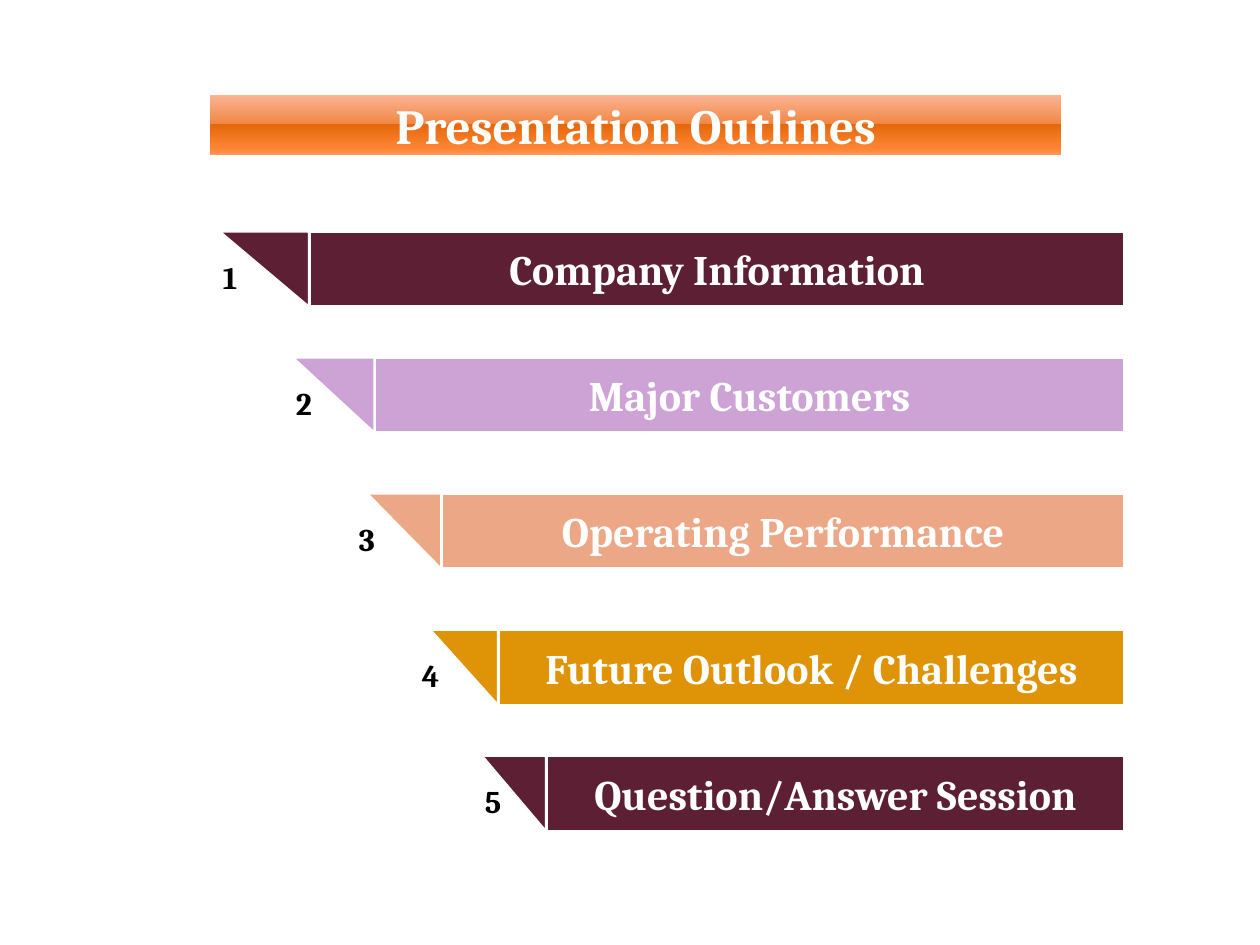
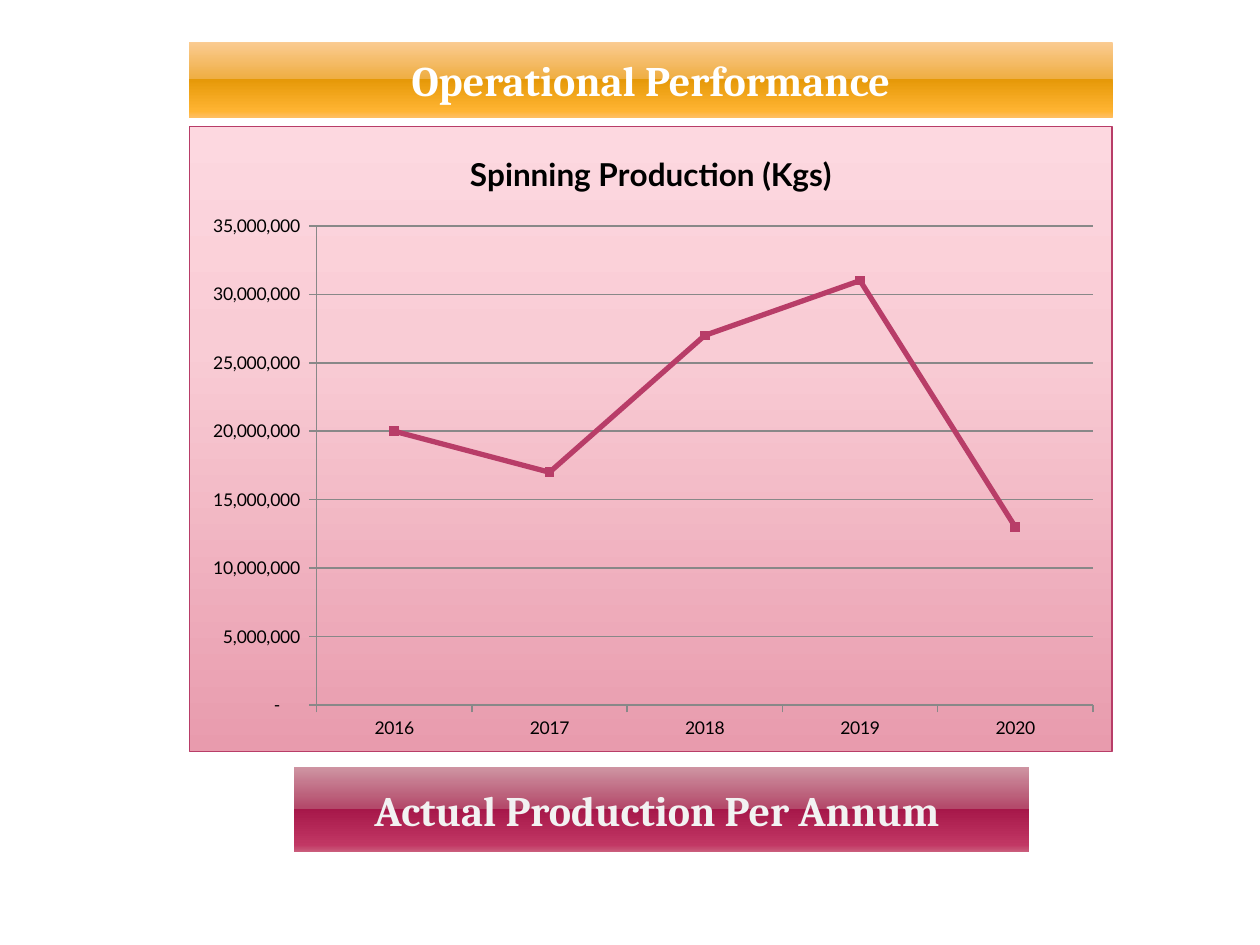
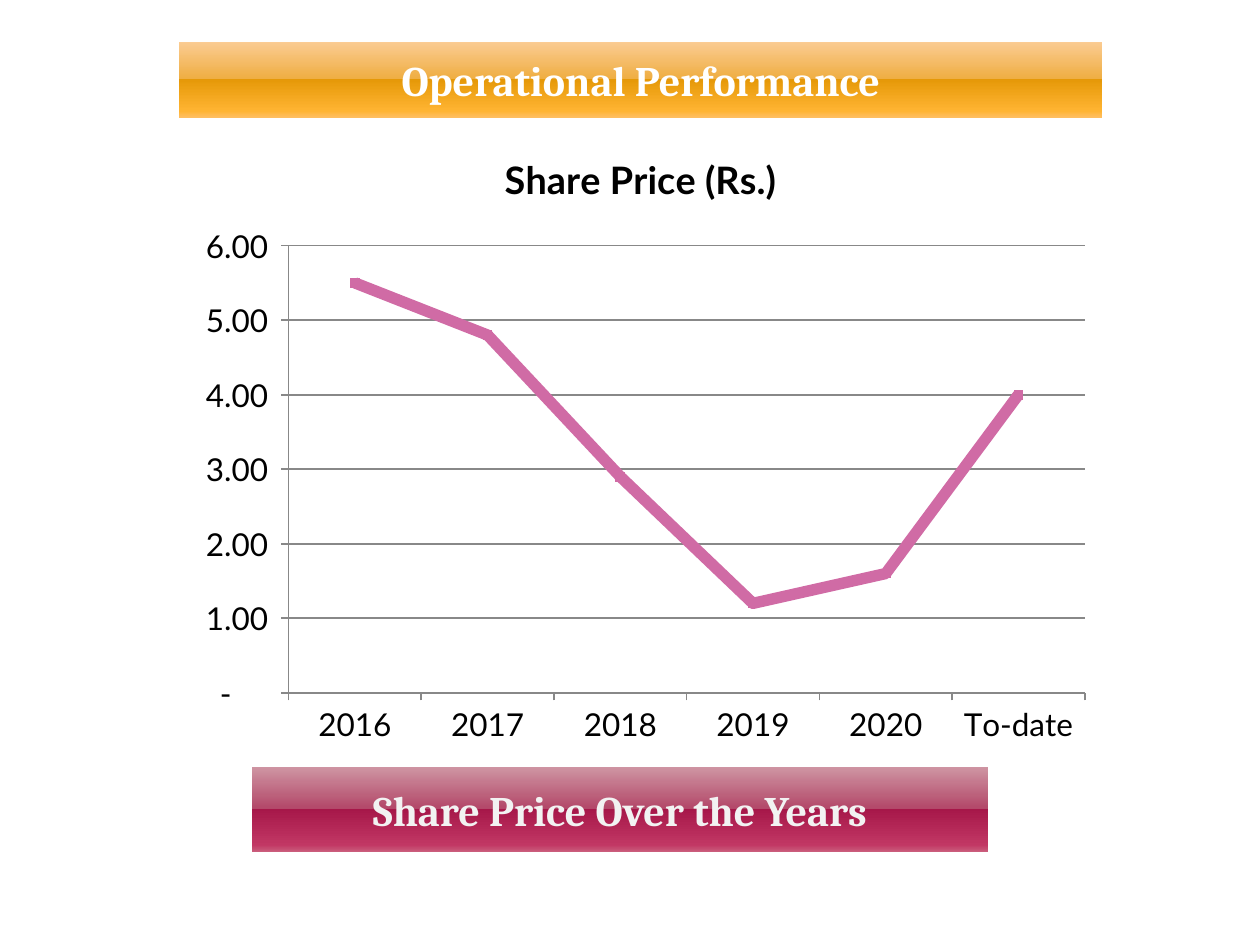
from dataclasses import dataclass

from pptx import Presentation
from pptx import util as u
from pptx.chart.data import CategoryChartData
from pptx.dml.color import RGBColor
from pptx.enum import chart as charts, shapes, text
from pptx.oxml import parse_xml
from pptx.oxml.ns import nsdecls, qn
from pptx.util import Inches, Pt

HEADING_FONT = "Cambria"
CHART_FONT = "Lato"
WHITE = RGBColor(0xFF, 0xFF, 0xFF)
OFF_WHITE = RGBColor(0xF2, 0xF2, 0xF2)
BLACK = RGBColor(0x00, 0x00, 0x00)
AXIS_GRAY = RGBColor(0x88, 0x88, 0x88)
PLUM = RGBColor(0x5C, 0x1F, 0x34)
LILAC = RGBColor(0xCD, 0xA3, 0xD6)
PEACH = RGBColor(0xEB, 0xA7, 0x86)
AMBER = RGBColor(0xDF, 0x93, 0x07)
RASPBERRY = RGBColor(0xB8, 0x3D, 0x68)
PINK = RGBColor(0xD0, 0x6B, 0xA5)

GLOSS_STOPS = (0, 49, 49, 92, 100)
Stops = tuple[tuple[int, RGBColor], ...]


def stops(positions: tuple[int, ...], colors: str) -> Stops:
    return tuple(zip(positions, map(RGBColor.from_string, colors.split())))


ORANGE_GLOSS = stops(GLOSS_STOPS, "FBB494 F08745 E5670B FF8736 FF9961")
GOLD_GLOSS = stops(GLOSS_STOPS, "FBCC93 EFAE43 E59807 FFB432 FFBE5F")
WINE_GLOSS = stops(GLOSS_STOPS, "CE94A2 B34869 A61749 C13764 CA5D7C")
ROSE_FADE = stops((0, 65, 100), "E89BAD F9CCD5 FDD8E0")


@dataclass(frozen=True)
class Frame:
    left: float
    top: float
    width: float
    height: float

    def lengths(self) -> tuple[u.Length, ...]:
        return tuple(map(Inches, (self.left, self.top, self.width, self.height)))


@dataclass(frozen=True)
class OutlineRow:
    label: str
    color: RGBColor
    tip: float
    bar_left: float
    top: float
    number_left: float


@dataclass(frozen=True)
class ChartPage:
    title_left: float
    caption: str
    caption_left: float
    chart_height: float
    series_name: str
    values: dict[str, float]
    number_format: str
    axis_max: float
    axis_step: float
    font_size: float
    title_size: float
    line_color: RGBColor
    line_width: float
    plot: Frame
    framed: bool


OUTLINE = (
    OutlineRow("Company Information", PLUM, 1.75, 2.46, 1.84, 1.67),
    OutlineRow("Major Customers", LILAC, 2.33, 2.98, 2.84, 2.25),
    OutlineRow("Operating Performance", PEACH, 2.92, 3.51, 3.92, 2.75),
    OutlineRow("Future Outlook / Challenges", AMBER, 3.42, 3.96, 5, 3.25),
    OutlineRow("Question/Answer Session", PLUM, 3.83, 4.34, 6, 3.75),
)
ROW_RIGHT = 8.92
ROW_HEIGHT = 0.59
CHART_TOP = 1
CHART_WIDTH = 7.33

CHART_PAGES = (
    ChartPage(
        title_left=1.5, caption="Actual Production Per Annum ", caption_left=2.33,
        chart_height=4.97, series_name="Spinning Production (Kgs)",
        values={"2016": 20_000_000, "2017": 17_000_000, "2018": 27_000_000,
                "2019": 31_000_000, "2020": 13_000_000},
        number_format='_(* #,##0_);_(* \\(#,##0\\);_(* "-"??_);_(@_)',
        axis_max=35_000_000, axis_step=5_000_000, font_size=10, title_size=18,
        line_color=RASPBERRY, line_width=3, plot=Frame(1.01, 0.79, 6.17, 3.81),
        framed=True,
    ),
    ChartPage(
        title_left=1.42, caption="Share Price Over the Years", caption_left=2,
        chart_height=5, series_name="Share Price (Rs.)",
        values={"2016": 5.5, "2017": 4.8, "2018": 2.9,
                "2019": 1.2, "2020": 1.6, "To-date": 4},
        number_format='_(* #,##0.00_);_(* \\(#,##0.00\\);_(* "-"??_);_(@_)',
        axis_max=6, axis_step=1, font_size=18, title_size=21.6,
        line_color=PINK, line_width=6.5, plot=Frame(0.87, 0.95, 6.32, 3.55),
        framed=False,
    ),
)


def gradient_xml(gradient: Stops, angle: int) -> str:
    marks = "".join(
        f'<a:gs pos="{position * 1000}"><a:srgbClr val="{color}"/></a:gs>'
        for position, color in gradient
    )
    return (f'<a:gradFill {nsdecls("a")}><a:gsLst>{marks}</a:gsLst>'
            f'<a:lin ang="{angle * 60000}" scaled="0"/></a:gradFill>')


def fill_gradient(shape, gradient: Stops) -> None:
    shape.fill.gradient()
    drawn = shape.element.spPr.find(qn("a:gradFill"))
    drawn.getparent().replace(drawn, parse_xml(gradient_xml(gradient, 90)))


def write(shape, words: str, *, size: float, color: RGBColor = WHITE,
          align=text.PP_ALIGN.CENTER, anchor=text.MSO_ANCHOR.MIDDLE) -> None:
    box = shape.text_frame
    box.word_wrap = True
    box.auto_size = text.MSO_AUTO_SIZE.NONE
    box.vertical_anchor = anchor
    para = box.paragraphs[0]
    para.alignment = align
    span = para.add_run()
    span.text = words
    span.font.name = HEADING_FONT
    span.font.size = Pt(size)
    span.font.bold = True
    span.font.color.rgb = color


def add_page(deck, title: str, frame: Frame, gradient: Stops, size: float):
    """Add a slide whose title is a glossy band."""
    page = deck.slides.add_slide(deck.slide_layouts[5])
    band = page.shapes.title
    band.left, band.top, band.width, band.height = frame.lengths()
    fill_gradient(band, gradient)
    write(band, title, size=size)
    return page


def add_block(page, kind, frame: Frame):
    block = page.shapes.add_shape(kind, *frame.lengths())
    block.shadow.inherit = False
    return block


def add_outline_row(page, number: int, row: OutlineRow) -> None:
    bar = add_block(page, shapes.MSO_SHAPE.RECTANGLE,
                    Frame(row.bar_left, row.top, ROW_RIGHT - row.bar_left, ROW_HEIGHT))
    corner = add_block(page, shapes.MSO_SHAPE.RIGHT_TRIANGLE,
                       Frame(row.tip, row.top, row.bar_left - row.tip - 0.01, ROW_HEIGHT))
    corner.rotation = 180
    for part in (bar, corner):
        part.fill.solid()
        part.fill.fore_color.rgb = row.color
        part.line.color.rgb = WHITE
        part.line.width = Pt(0.9)
    write(bar, row.label, size=24)
    number_frame = Frame(row.number_left, row.top + 0.16, 0.33, 0.4)
    number_box = page.shapes.add_textbox(*number_frame.lengths())
    write(number_box, str(number), size=18, color=BLACK,
          align=text.PP_ALIGN.LEFT, anchor=text.MSO_ANCHOR.TOP)


def style_chart_area(chart, framed: bool) -> None:
    if framed:
        look = (gradient_xml(ROSE_FADE, 270) + f'<a:ln w="{Pt(0.75)}"><a:solidFill>'
                f'<a:srgbClr val="{RASPBERRY}"/></a:solidFill></a:ln>')
    else:
        look = "<a:noFill/><a:ln><a:noFill/></a:ln>"
    area = parse_xml(f'<c:spPr {nsdecls("c", "a")}>{look}</c:spPr>')
    chart.element.find(qn("c:chart")).addnext(area)


def place_plot(chart, plot: Frame, chart_height: float) -> None:
    """Fix the inner plot area, given in inches from the chart's corner."""
    plot_area = chart.element.find(qn("c:chart")).find(qn("c:plotArea"))
    for automatic in plot_area.findall(qn("c:layout")):
        plot_area.remove(automatic)
    fractions = {"x": plot.left / CHART_WIDTH, "y": plot.top / chart_height,
                 "w": plot.width / CHART_WIDTH, "h": plot.height / chart_height}
    sizes = "".join(f'<c:{name} val="{value:.4f}"/>' for name, value in fractions.items())
    plot_area.insert(0, parse_xml(
        f'<c:layout {nsdecls("c")}><c:manualLayout><c:layoutTarget val="inner"/>'
        f'<c:xMode val="edge"/><c:yMode val="edge"/>{sizes}</c:manualLayout></c:layout>'))


def add_line_chart(page, content: ChartPage) -> None:
    data = CategoryChartData(number_format=content.number_format)
    data.categories = list(content.values)
    data.add_series(content.series_name, list(content.values.values()))
    frame = Frame(content.title_left, CHART_TOP, CHART_WIDTH, content.chart_height)
    chart = page.shapes.add_chart(
        charts.XL_CHART_TYPE.LINE_MARKERS, *frame.lengths(), data).chart
    chart.has_legend = False
    chart.font.name = CHART_FONT
    chart.font.size = Pt(content.font_size)
    chart.font.color.rgb = BLACK

    chart.has_title = True
    chart.chart_title.include_in_layout = False
    span = chart.chart_title.text_frame.paragraphs[0].add_run()
    span.text = content.series_name
    span.font.name = CHART_FONT
    span.font.size = Pt(content.title_size)
    span.font.bold = True
    span.font.color.rgb = BLACK

    values = chart.value_axis
    values.minimum_scale = 0
    values.maximum_scale = content.axis_max
    values.major_unit = content.axis_step
    values.has_major_gridlines = True
    values.tick_labels.number_format = content.number_format
    values.tick_labels.number_format_is_linked = False
    for axis in (values, chart.category_axis):
        axis.major_tick_mark = charts.XL_TICK_MARK.OUTSIDE
    for line in (values.format.line, chart.category_axis.format.line,
                 values.major_gridlines.format.line):
        line.color.rgb = AXIS_GRAY
        line.width = Pt(0.9)

    chart.plots[0].vary_by_categories = False
    series = chart.plots[0].series[0]
    series.smooth = False
    series.format.line.color.rgb = content.line_color
    series.format.line.width = Pt(content.line_width)
    series.marker.style = charts.XL_MARKER_STYLE.SQUARE
    series.marker.size = 5
    series.marker.format.fill.solid()
    series.marker.format.fill.fore_color.rgb = content.line_color
    series.marker.format.line.color.rgb = content.line_color

    style_chart_area(chart, content.framed)
    place_plot(chart, content.plot, content.chart_height)


def add_chart_page(deck, content: ChartPage) -> None:
    page = add_page(deck, "Operational Performance",
                    Frame(content.title_left, 0.33, CHART_WIDTH, 0.6), GOLD_GLOSS, 24)
    add_line_chart(page, content)
    caption = add_block(page, shapes.MSO_SHAPE.RECTANGLE,
                        Frame(content.caption_left, 6.09, 5.84, 0.67))
    fill_gradient(caption, WINE_GLOSS)
    caption.line.fill.background()
    write(caption, content.caption, size=24, color=OFF_WHITE)


def main() -> None:
    deck = Presentation()
    deck.slide_width, deck.slide_height = Inches(10), Inches(7.5)
    outline = add_page(deck, "Presentation Outlines",
                       Frame(1.67, 0.75, 6.75, 0.48), ORANGE_GLOSS, 28)
    for number, row in enumerate(OUTLINE, 1):
        add_outline_row(outline, number, row)
    for content in CHART_PAGES:
        add_chart_page(deck, content)
    deck.save("out.pptx")


if __name__ == "__main__":
    main()
